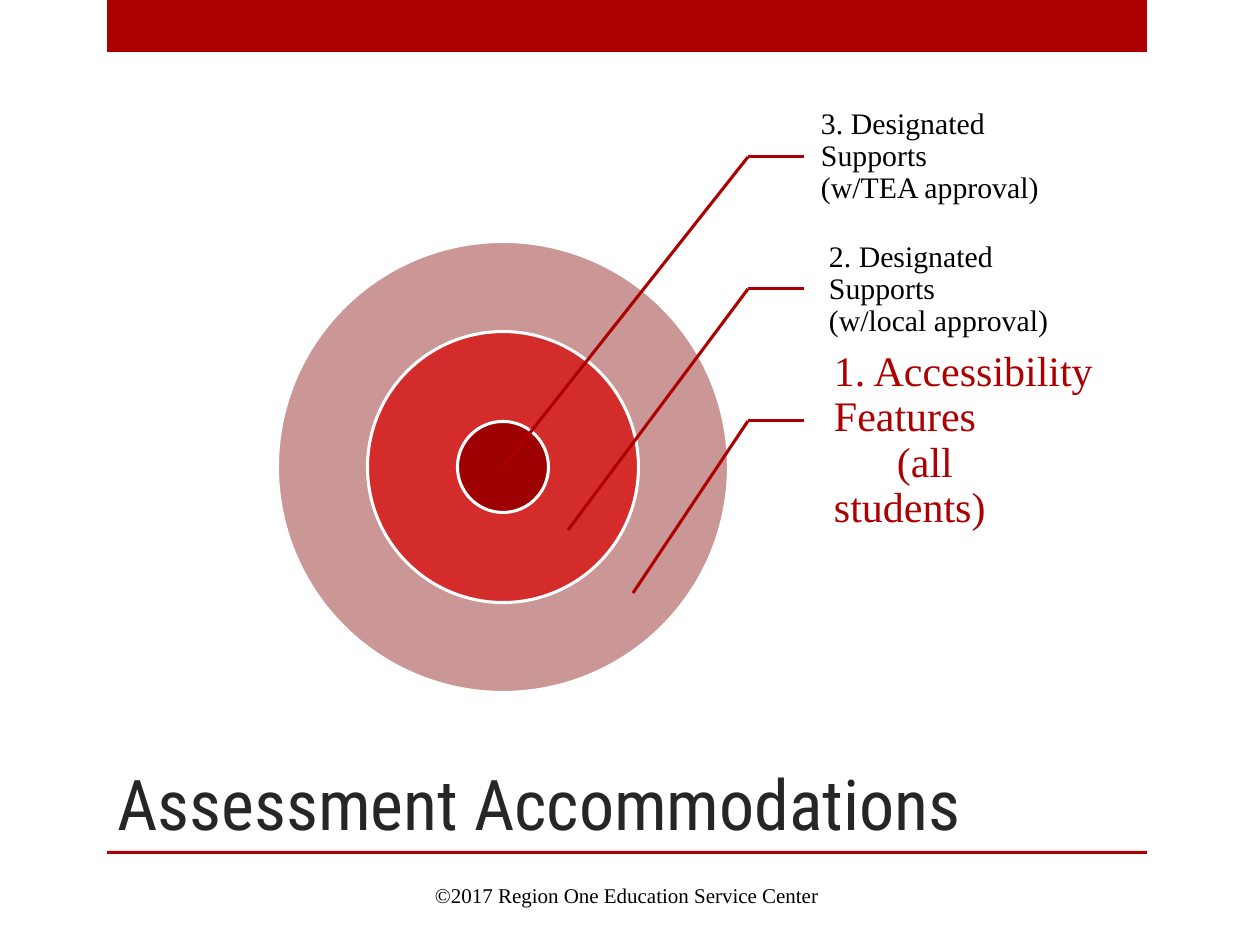
"""Build the Assessment Accommodations slide with its three-ring target."""
from lxml.etree import SubElement
from pptx import Presentation
from pptx.dml.color import RGBColor
from pptx.enum.shapes import MSO_CONNECTOR as Connector, MSO_SHAPE as Shape
from pptx.enum.text import MSO_ANCHOR as Anchor, MSO_AUTO_SIZE as AutoSize, PP_ALIGN as Align
from pptx.oxml.ns import qn
from pptx.util import Emu, Pt

SCALE = 914400 / 126
RED, WHITE, BLACK, CHARCOAL = "AD0101", "FFFFFF", "000000", "262626"
SERIF = "Times New Roman"

TITLE = "Assessment Accommodations"
COPYRIGHT = "©2017 Region One Education Service Center"
BARS = [(107, 0, 1040, 52), (107, 851, 1040, 3)]
RING_COLORS = ["CA9696", "D42B2B", "9D0101"]
CALLOUTS = [
    dict(lines=["3. Designated Supports", "(w/TEA approval)"],
         box=(805, 91, 291, 132), insets=(16, 3, 3, 3)),
    dict(lines=["2. Designated Supports", "(w/local approval)"],
         box=(813, 224, 290, 132), insets=(16, 3, 3, 3)),
    dict(lines=["1. Accessibility Features", "(all students)"],
         box=(810, 373, 301, 136), insets=(24, 4, 4, 4),
         size=24, color=RED, last_indent=63),
]

CENTER_X, CENTER_Y = 503, 467
OUTER_DIAMETER, DIAMETER_STEP = 451, 180
TIP_STEP_X, TIP_STEP_Y = 65, 63
LEADER_Y, LEADER_STEP = 157, 132
ELBOW_X, LEADER_END_X = 748, 804


def px(length):
    return Emu(round(length * SCALE))


def rgb(color):
    return RGBColor.from_string(color)


def write(frame, lines, size=17, color=BLACK, font=SERIF, align=Align.LEFT,
          anchor=Anchor.MIDDLE, insets=None, spacing=None, last_indent=0):
    frame.word_wrap = True
    frame.auto_size = AutoSize.NONE
    frame.vertical_anchor = anchor
    if insets:
        (frame.margin_left, frame.margin_top,
         frame.margin_right, frame.margin_bottom) = map(px, insets)
    frame.text = "\n".join(lines)
    for paragraph in frame.paragraphs:
        paragraph.alignment = align
        paragraph.line_spacing = spacing
        for run in paragraph.runs:
            run.font.size = Pt(size)
            run.font.name = font
            run.font.color.rgb = rgb(color)
    if last_indent:
        paragraph._p.get_or_add_pPr().set("indent", str(px(last_indent)))


def add_filled(slide, preset, box, fill, outline=None):
    part = slide.shapes.add_shape(preset, *map(px, box))
    part.shadow.inherit = False
    part.fill.solid()
    part.fill.fore_color.rgb = rgb(fill)
    if outline:
        part.line.color.rgb = rgb(outline)
        part.line.width = Pt(1.75)
    else:
        part.line.fill.background()


def add_leader(slide, start, end):
    leader = slide.shapes.add_connector(Connector.STRAIGHT, *map(px, start + end))
    leader.line.color.rgb = rgb(RED)
    leader.line.width = Pt(1.75)
    SubElement(leader._element.spPr, qn("a:effectLst"))


def add_textbox(slide, box, lines, **style):
    write(slide.shapes.add_textbox(*map(px, box)).text_frame, lines, **style)


def main():
    deck = Presentation()
    deck.slide_width, deck.slide_height = px(1260), px(945)
    slide = deck.slides.add_slide(deck.slide_layouts[5])

    for bar in BARS:
        add_filled(slide, Shape.RECTANGLE, bar, RED)

    title = slide.shapes.title
    title.left, title.top, title.width, title.height = map(px, (105, 630, 935, 221))
    write(title.text_frame, [TITLE], size=40, color=CHARCOAL,
          font="Roboto Condensed", anchor=Anchor.BOTTOM)
    add_textbox(slide, (110, 870, 1034, 51), [COPYRIGHT], size=12, align=Align.CENTER)

    for level, color in enumerate(RING_COLORS):
        diameter = OUTER_DIAMETER - level * DIAMETER_STEP
        ring = (CENTER_X - diameter / 2, CENTER_Y - diameter / 2, diameter, diameter)
        add_filled(slide, Shape.OVAL, ring, color, outline=WHITE)

    for level, callout in enumerate(CALLOUTS):
        elbow = (ELBOW_X, LEADER_Y + level * LEADER_STEP)
        tip = (CENTER_X + level * TIP_STEP_X, CENTER_Y + level * TIP_STEP_Y)
        add_textbox(slide, spacing=0.9, **callout)
        add_leader(slide, elbow, (LEADER_END_X, elbow[1]))
        add_leader(slide, elbow, tip)

    deck.save("out.pptx")


if __name__ == "__main__":
    main()
